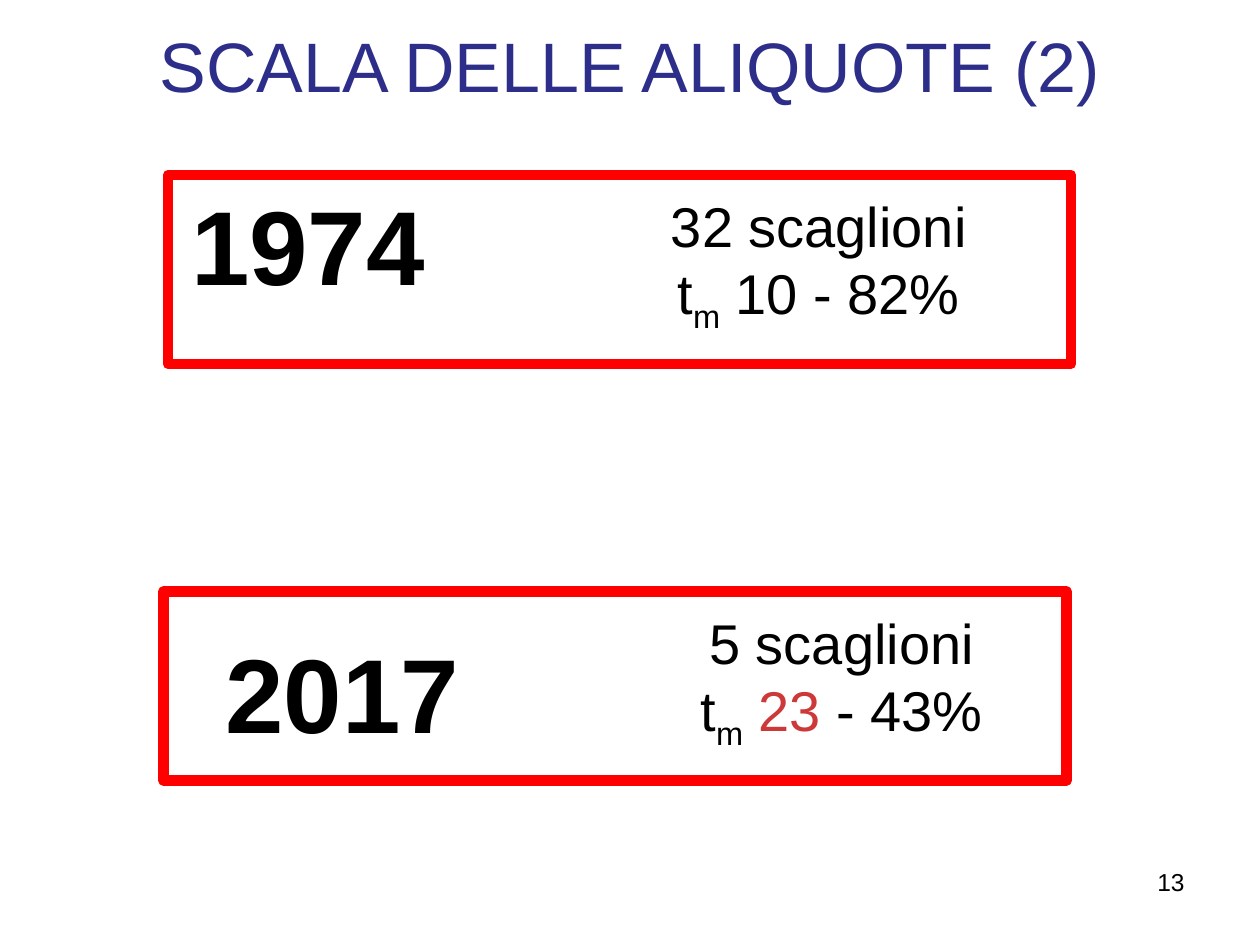
from pptx import Presentation
from pptx.dml.color import RGBColor
from pptx.enum import shapes, text
from pptx.util import Pt

FONT = "Arial"
BLACK = RGBColor(0x00, 0x00, 0x00)
NAVY = RGBColor(0x2D, 0x2D, 0x8A)
FRAME_RED = RGBColor(0xFF, 0x00, 0x00)
RATE_RED = RGBColor(0xCD, 0x38, 0x38)
CENTER = text.PP_ALIGN.CENTER
TOP, MIDDLE = text.MSO_ANCHOR.TOP, text.MSO_ANCHOR.MIDDLE


def add_frame(page, left, top):
    """Red outline around one year's tax scale."""
    frame = page.shapes.add_shape(shapes.MSO_SHAPE.RECTANGLE,
                                  Pt(left), Pt(top), Pt(516), Pt(108))
    frame.shadow.inherit = False
    frame.fill.background()
    frame.line.color.rgb = FRAME_RED
    frame.line.width = Pt(6)


def add_text(page, bounds, lines, size, color=BLACK, align=CENTER,
             anchor=TOP, bold=False, wrap=True):
    """Text box; each line is a list of (wording, style) spans."""
    box = page.shapes.add_textbox(*map(Pt, bounds))
    frame = box.text_frame
    frame.word_wrap = wrap
    frame.vertical_anchor = anchor
    for index, spans in enumerate(lines):
        para = frame.add_paragraph() if index else frame.paragraphs[0]
        para.alignment = align
        for wording, style in spans:
            span = para.add_run()
            span.text = wording
            span.font.name = FONT
            span.font.size = Pt(size)
            span.font.bold = bold
            span.font.color.rgb = style.get("color", color)
            if style.get("subscript"):
                span.font._element.set("baseline", "-25000")
    return box


def add_year(page, bounds, year):
    add_text(page, bounds, [[(year, {})]], 60, anchor=MIDDLE,
             bold=True, wrap=False)


def add_scale(page, bounds, brackets, rates, indent):
    """Number of brackets above the range of marginal rates."""
    lines = [[(brackets, {})],
             [("t", {}), ("m", {"subscript": True}), *rates]]
    box = add_text(page, bounds, lines, 32)
    # Right indent shifts the first line off centre
    first = box.text_frame.paragraphs[0]
    first._p.get_or_add_pPr().set("marR", str(Pt(indent)))


def main():
    deck = Presentation()
    deck.slide_width, deck.slide_height = Pt(720), Pt(540)
    page = deck.slides.add_slide(deck.slide_layouts[6])

    # Title
    add_text(page, (72, -8, 576, 90), [[("SCALA DELLE ALIQUOTE (2)", {})]],
             40, color=NAVY, anchor=MIDDLE)

    # 1974 scale
    add_scale(page, (318, 106, 318, 114), "32 scaglioni",
              [(" 10 - 82%", {})], 18)
    add_year(page, (102, 99.5, 148, 79), "1974")
    add_frame(page, 96, 100)

    # 2017 scale
    add_frame(page, 93.5, 338)
    add_scale(page, (350.5, 344, 270, 96), "5 scaglioni",
              [(" 23", {"color": RATE_RED}), (" - 43%", {})], 9)
    add_year(page, (112.5, 355, 166, 80), "2017")

    # Page number
    add_text(page, (516, 492, 168, 37.5), [[("13", {})]], 14,
             align=text.PP_ALIGN.RIGHT)

    deck.save("out.pptx")


if __name__ == "__main__":
    main()
